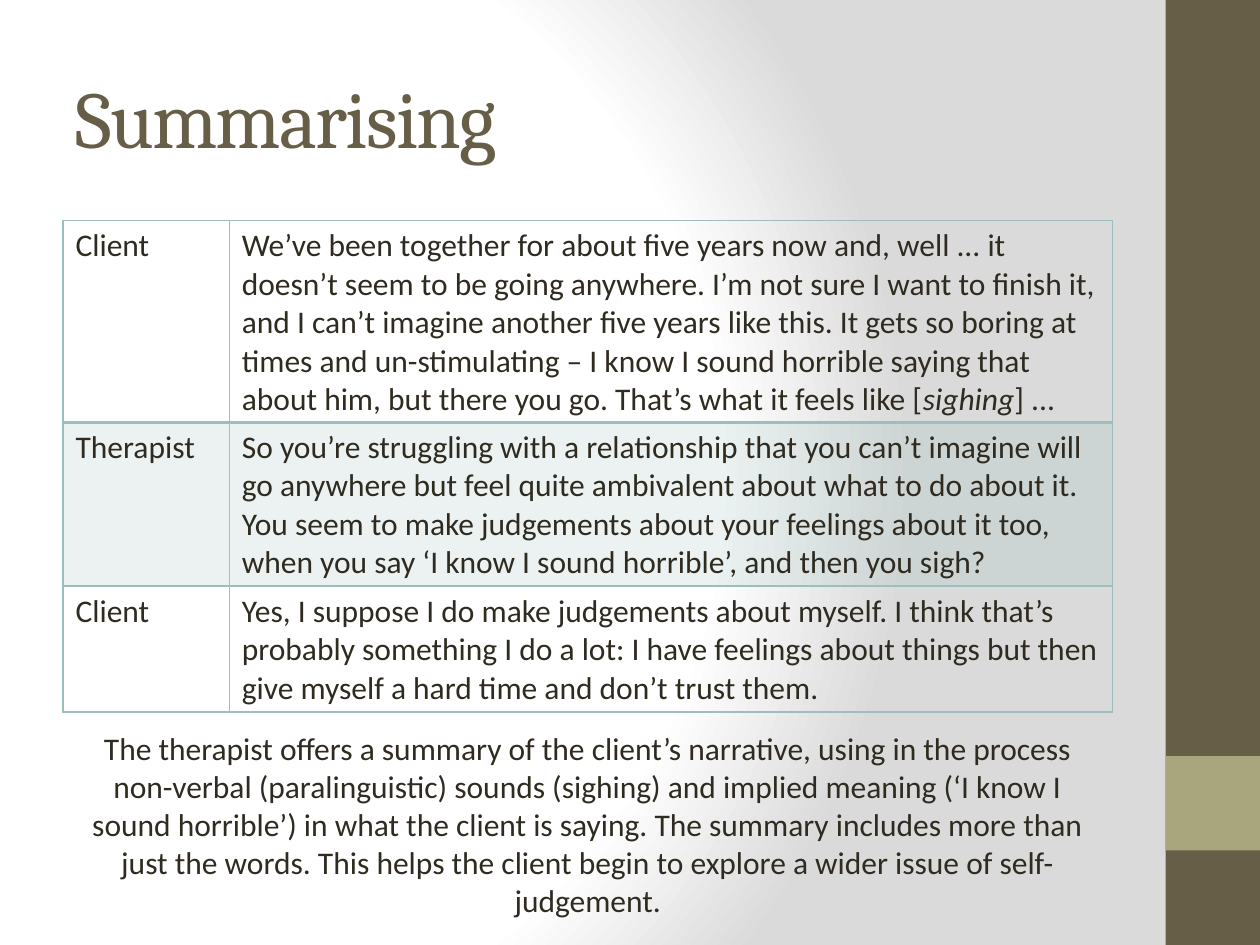
from pptx import Presentation
from pptx.dml.color import RGBColor
from pptx.enum.shapes import MSO_SHAPE
from pptx.enum.text import MSO_ANCHOR, MSO_AUTO_SIZE, PP_ALIGN
from pptx.oxml import parse_xml
from pptx.oxml.ns import nsdecls, qn
from pptx.util import Inches, Pt
from lxml.etree import SubElement

BROWN, OLIVE, TEAL, INK = "675E47", "A9A57C", "9CBEBD", "2F2B20"
LEFT, WIDTH = 0.5, 8.33

DIALOGUE = [
    ("Client", ["We’ve been together for about five years now and, well ... it doesn’t seem "
                "to be going anywhere. I’m not sure I want to finish it, and I can’t imagine "
                "another five years like this. It gets so boring at times and un-stimulating "
                "– I know I sound horrible saying that about him, but there you go. That’s "
                "what it feels like [", "sighing", "] ..."]),
    ("Therapist", ["So you’re struggling with a relationship that you can’t imagine will go "
                   "anywhere but feel quite ambivalent about what to do about it. You seem to "
                   "make judgements about your feelings about it too, when you say ‘I know I "
                   "sound horrible’, and then you sigh?"]),
    ("Client", ["Yes, I suppose I do make judgements about myself. I think that’s probably "
                "something I do a lot: I have feelings about things but then give myself a "
                "hard time and don’t trust them."]),
]
SUMMARY = ("The therapist offers a summary of the client’s narrative, using in the process "
           "non-verbal (paralinguistic) sounds (sighing) and implied meaning (‘I know I sound "
           "horrible’) in what the client is saying. The summary includes more than just the "
           "words. This helps the client begin to explore a wider issue of self-judgement.")


def color(value):
    return RGBColor.from_string(value)


def set_font(para, size, name, value):
    para.font.size = Pt(size)
    para.font.name = name
    para.font.color.rgb = color(value)


def set_background(page):
    """Radial gradient, white at its centre left of the middle."""
    stops = "".join(
        f'<a:gs pos="{position * 1000}"><a:srgbClr val="{value}"/></a:gs>'
        for position, value in [(0, "FFFFFF"), (75, "FFFFFF"), (100, "DADADA")])
    gradient = parse_xml(
        f'<a:gradFill {nsdecls("a")} rotWithShape="1"><a:gsLst>{stops}</a:gsLst>'
        '<a:path path="circle"><a:fillToRect l="20000" t="50000" r="100000" b="50000"/>'
        '</a:path></a:gradFill>')
    page.background.fill.solid()
    solid = next(page.element.iter(qn("a:solidFill")))
    solid.getparent().replace(solid, gradient)


def add_block(page, top, height, value):
    block = page.shapes.add_shape(MSO_SHAPE.RECTANGLE, Inches(9.25), Inches(top),
                                  Inches(0.75), Inches(height))
    block.shadow.inherit = False
    block.fill.solid()
    block.fill.fore_color.rgb = color(value)
    block.line.fill.background()


def add_text(page, top, height, text):
    box = page.shapes.add_textbox(Inches(LEFT), Inches(top), Inches(WIDTH), Inches(height))
    box.text_frame.word_wrap = True
    para = box.text_frame.paragraphs[0]
    para.add_run().text = text
    return box.text_frame, para


def add_title(page):
    frame, para = add_text(page, 0.3, 1.25, "Summarising")
    frame.vertical_anchor = MSO_ANCHOR.MIDDLE
    set_font(para, 46, "Cambria", BROWN)
    para.runs[0].font._element.set("spc", "-100")


def add_summary(page):
    frame, para = add_text(page, 5.74, 1.62, SUMMARY)
    frame.auto_size = MSO_AUTO_SIZE.SHAPE_TO_FIT_TEXT
    para.alignment = PP_ALIGN.CENTER
    set_font(para, 18, "Calibri", INK)


def set_borders(cell, widths):
    """Draw left, right, top and bottom borders; widths are in points."""
    properties = cell._tc.get_or_add_tcPr()
    for index, (side, width) in enumerate(zip("LRTB", widths)):
        properties.insert(index, parse_xml(
            f'<a:ln{side} {nsdecls("a")} w="{Pt(width)}"><a:solidFill>'
            f'<a:srgbClr val="{TEAL}"/></a:solidFill></a:ln{side}>'))


def fill_cell(cell, parts, shaded, widths):
    """Write the parts, every second one in italics."""
    para = cell.text_frame.paragraphs[0]
    set_font(para, 18, "Calibri", INK)
    for index, part in enumerate(parts):
        span = para.add_run()
        span.text = part
        if index % 2:
            span.font.italic = True
    if shaded:
        cell.fill.solid()
        cell.fill.fore_color.rgb = color(TEAL)
        tint = next(cell._tc.tcPr.iter(qn("a:srgbClr")))
        SubElement(tint, qn("a:alpha")).set("val", "20000")
    else:
        cell.fill.background()
    set_borders(cell, widths)


def add_dialogue(page):
    table = page.shapes.add_table(len(DIALOGUE), 2, Inches(LEFT), Inches(1.75),
                                  Inches(WIDTH), Inches(3.9)).table
    table.first_row = table.horz_banding = False
    for column, width in zip(table.columns, (1.32, 7.01)):
        column.width = Inches(width)
    for row, height in zip(table.rows, (1.6, 1.3, 1)):
        row.height = Inches(height)
    for index, (speaker, speech) in enumerate(DIALOGUE):
        top, bottom = (2 if index == 1 else 1), (2 if index == 0 else 1)
        for column, parts in enumerate(([speaker], speech)):
            fill_cell(table.cell(index, column), parts, index == 1, (1, 1, top, bottom))


def main():
    deck = Presentation()
    deck.slide_width, deck.slide_height = Inches(10), Inches(7.5)
    page = deck.slides.add_slide(deck.slide_layouts[6])
    set_background(page)
    add_block(page, 0, 7.5, BROWN)
    add_block(page, 6, 0.75, OLIVE)
    add_title(page)
    add_dialogue(page)
    add_summary(page)
    deck.save("out.pptx")


if __name__ == "__main__":
    main()
